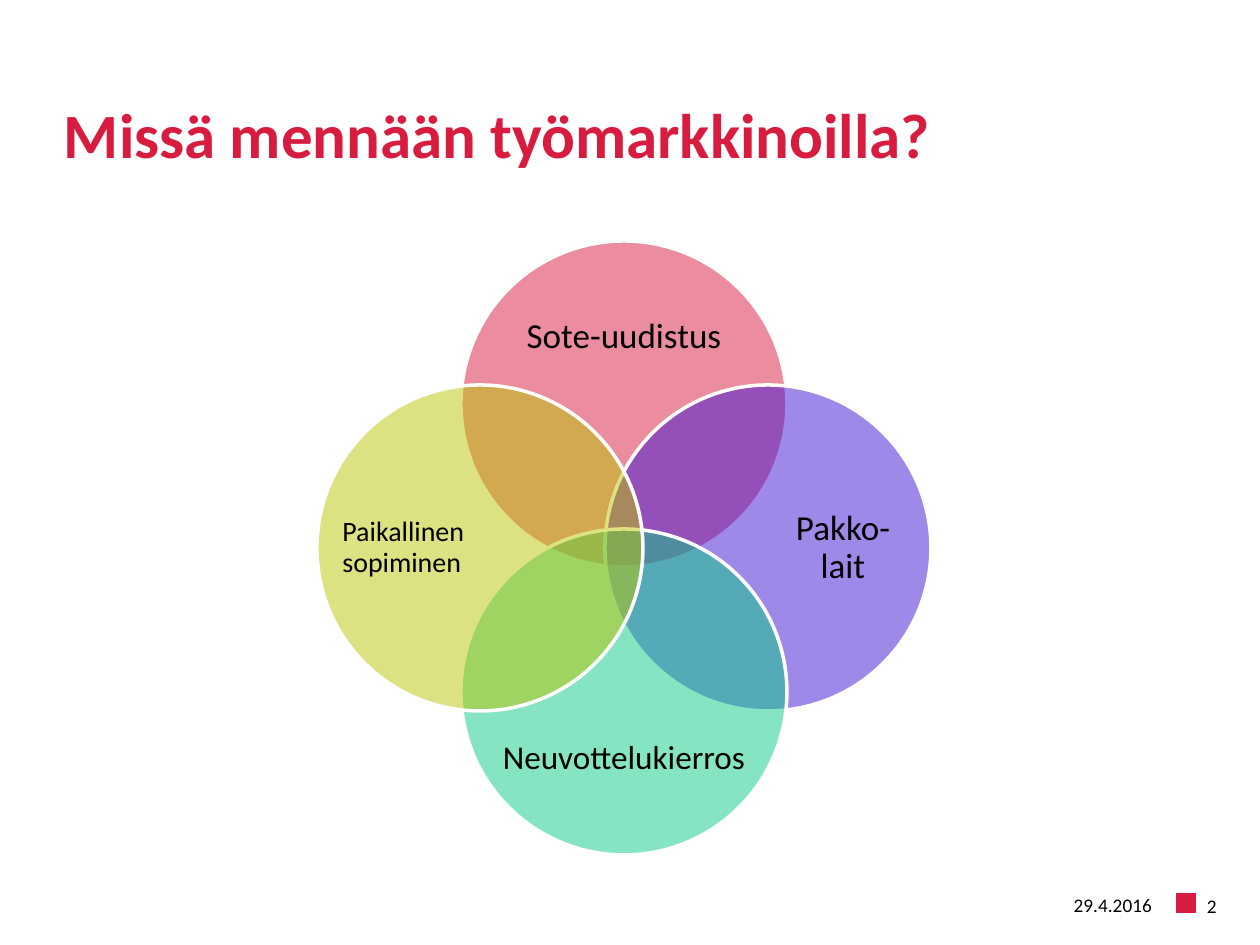
from dataclasses import dataclass

from lxml import etree
from pptx import Presentation
from pptx import util as u
from pptx.dml.color import RGBColor
from pptx.enum import shapes, text
from pptx.oxml import ns

PX = 914400 / 126  # EMU per pixel


@dataclass(frozen=True)
class Theme:
    font: str = "Calibri"
    accent: str = "D81C3F"
    violet: str = "3F13D2"
    green: str = "0CCC86"
    lime: str = "BAC405"
    ink: str = "000000"
    outline: str = "FFFFFF"
    title_size: int = 36
    label_size: int = 20
    label_medium: int = 19
    label_small: int = 16
    footer_size: int = 11


def emu(*lengths):
    return [u.Emu(round(length * PX)) for length in lengths]


class SlideBuilder:
    def __init__(self, theme, width, height):
        self.theme = theme
        self.deck = Presentation()
        self.deck.slide_width, self.deck.slide_height = emu(width, height)
        self.slide = self.deck.slides.add_slide(self.deck.slide_layouts[5])

    def set_words(self, shape, words, size, color, align, anchor, right=0, bold=False):
        frame = shape.text_frame
        frame.text = words
        frame.word_wrap = True
        frame.auto_size = text.MSO_AUTO_SIZE.NONE
        frame.vertical_anchor = anchor
        frame.margin_left = frame.margin_top = frame.margin_bottom = 0
        frame.margin_right = emu(right)[0]
        paragraph = frame.paragraphs[0]
        paragraph.alignment = align
        font = paragraph.runs[0].font
        font.name, font.size, font.bold = self.theme.font, u.Pt(size), bold
        font.color.rgb = RGBColor.from_string(color)
        return paragraph

    def title(self, words, *box):
        title = self.slide.shapes.title
        title.left, title.top, title.width, title.height = emu(*box)
        self.set_words(title, words, self.theme.title_size, self.theme.accent,
                       text.PP_ALIGN.LEFT, text.MSO_ANCHOR.TOP, bold=True)

    def label(self, words, size, align, *box, right=0, parent=None):
        label = (parent or self.slide).shapes.add_textbox(*emu(*box))
        return self.set_words(label, words, size, self.theme.ink, align,
                              text.MSO_ANCHOR.MIDDLE, right)

    def solid(self, kind, color, *box, parent=None):
        shape = (parent or self.slide).shapes.add_shape(kind, *emu(*box))
        shape.shadow.inherit = False
        shape.fill.solid()
        shape.fill.fore_color.rgb = RGBColor.from_string(color)
        shape.line.fill.background()
        return shape

    def circle(self, color, *box, parent=None):
        circle = self.solid(shapes.MSO_SHAPE.OVAL, color, *box, parent=parent)
        circle.line.color.rgb = RGBColor.from_string(self.theme.outline)
        circle.line.width = u.Pt(2)
        tint = circle.element.spPr.find(ns.qn("a:solidFill"))[0]
        etree.SubElement(tint, ns.qn("a:alpha"), val="50000")

    def venn(self, center_x, center_y, diameter, offset, sets):
        group = self.slide.shapes.add_group_shape()
        for words, color, size, align, dx, dy in sets:
            self.circle(color, center_x + dx * offset - diameter / 2,
                        center_y + dy * offset - diameter / 2,
                        diameter, diameter, parent=group)
            # Labels sit in the outer part of each circle
            width, height = (125, 251) if dx else (251, 103)
            paragraph = self.label(words, size, align,
                                   center_x + dx * 219 - width / 2,
                                   center_y + dy * 211 - height / 2,
                                   width, height, parent=group)
            paragraph.line_spacing = 0.9


def main():
    theme = Theme()
    align = text.PP_ALIGN
    page = SlideBuilder(theme, 1260, 945)

    # Title
    page.title("Missä mennään työmarkkinoilla?", 64, 96, 1124, 126)

    # Four overlapping themes: label, colour, size, alignment, direction
    page.venn(624, 548, 326, 144, [
        ("Sote-uudistus", theme.accent, theme.label_size, align.CENTER, 0, -1),
        ("Pakko-lait", theme.violet, theme.label_size, align.CENTER, 1, 0),
        ("Neuvottelukierros", theme.green, theme.label_medium, align.CENTER, 0, 1),
        ("Paikallinen sopiminen", theme.lime, theme.label_small, align.JUSTIFY, -1, 0),
    ])

    # Footer
    page.solid(shapes.MSO_SHAPE.RECTANGLE, theme.accent, 1176, 893, 20, 20)
    page.label("29.4.2016", theme.footer_size, align.RIGHT, 1047, 890, 118, 30, right=13)
    page.label("2", theme.footer_size, align.LEFT, 1207, 891, 53, 29, right=13)

    page.deck.save("out.pptx")


if __name__ == "__main__":
    main()
